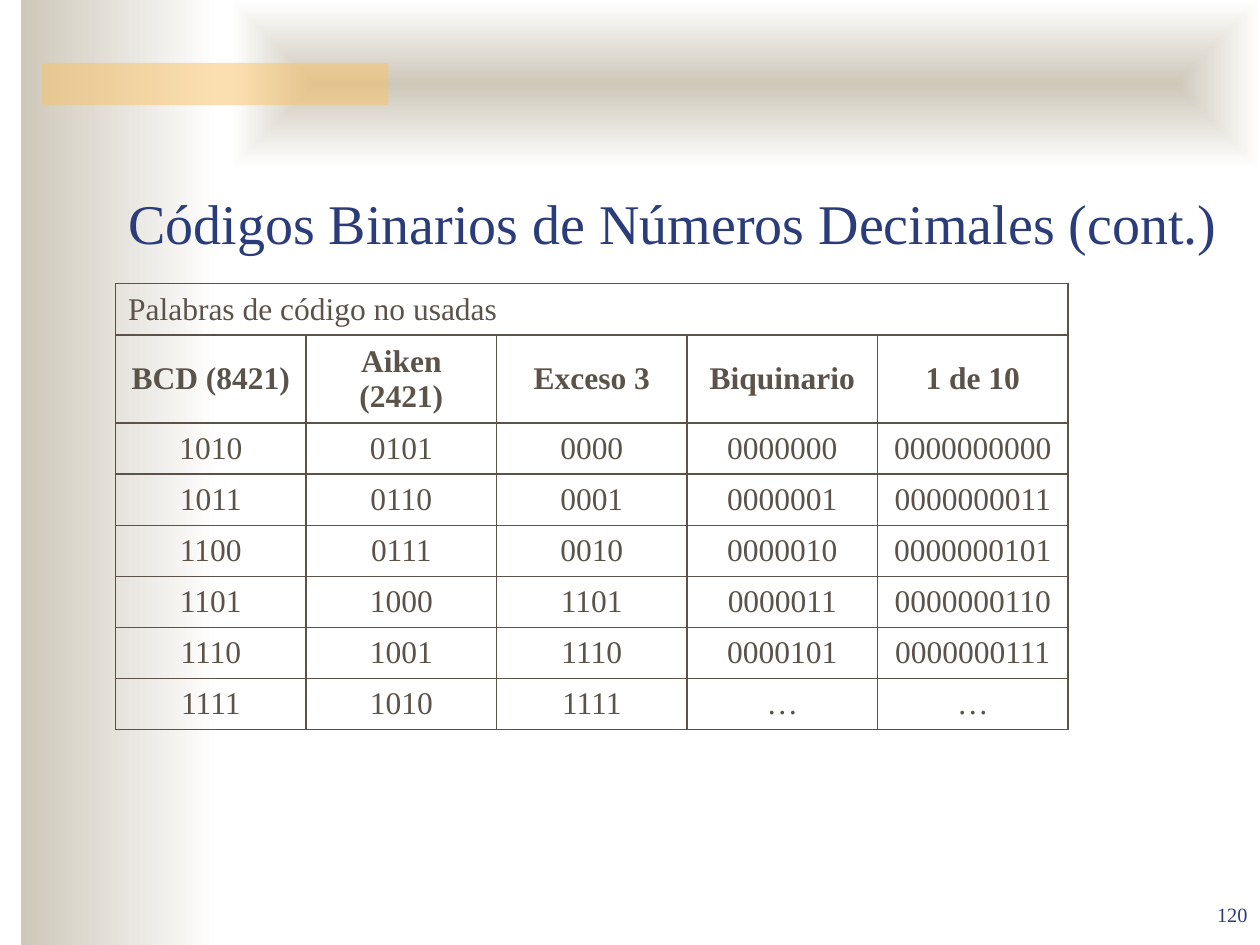
from lxml import etree
from pptx import Presentation
from pptx.dml.color import RGBColor
from pptx.enum import shapes, text
from pptx.oxml import parse_xml
from pptx.oxml.ns import nsdecls, qn
from pptx.util import Cm, Pt

COLORS = {"sand": "CEC8BA", "white": "FFFFFF", "amber": "FAC164",
          "navy": "2A3D7A", "brown": "5B5249"}
FONT = "Times New Roman"
LINEAR = '<a:lin ang="0" scaled="1"/>'
FROM_CENTER = ('<a:path path="shape">'
               '<a:fillToRect l="50000" t="50000" r="50000" b="50000"/></a:path>')
CODES = [
    ["BCD (8421)", "Aiken (2421)", "Exceso 3", "Biquinario", "1 de 10"],
    ["1010", "0101", "0000", "0000000", "0000000000"],
    ["1011", "0110", "0001", "0000001", "0000000011"],
    ["1100", "0111", "0010", "0000010", "0000000101"],
    ["1101", "1000", "1101", "0000011", "0000000110"],
    ["1110", "1001", "1110", "0000101", "0000000111"],
    ["1111", "1010", "1111", "…", "…"],
]


def style(paragraph, size, color, alignment, bold=False):
    paragraph.alignment = alignment
    for run in paragraph.runs:
        run.font.name = FONT
        run.font.size = Pt(size)
        run.font.bold = bold
        run.font.color.rgb = RGBColor.from_string(COLORS[color])


def add_band(left, top, width, height, color):
    band = slide.shapes.add_shape(shapes.MSO_SHAPE.RECTANGLE,
                                  Cm(left), Cm(top), Cm(width), Cm(height))
    band.shadow.inherit = False
    band.line.fill.background()
    band.fill.solid()
    band.fill.fore_color.rgb = RGBColor.from_string(COLORS[color])
    return band


presentation = Presentation()
presentation.slide_width = Cm(25.4)
presentation.slide_height = Cm(19.05)
slide = presentation.slides.add_slide(presentation.slide_layouts[5])

# Background bands
for box, direction in [((0.42, 0, 4.02, 19.05), LINEAR),
                       ((4.66, 0, 20.74, 3.39), FROM_CENTER)]:
    band = add_band(*box, "sand")
    solid = band.element.spPr.find(qn("a:solidFill"))
    gradient = parse_xml(
        f'<a:gradFill {nsdecls("a")} rotWithShape="1"><a:gsLst>'
        f'<a:gs pos="0"><a:srgbClr val="{COLORS["sand"]}"/></a:gs>'
        f'<a:gs pos="100000"><a:srgbClr val="{COLORS["white"]}"/></a:gs>'
        f'</a:gsLst>{direction}</a:gradFill>')
    band.element.spPr.replace(solid, gradient)

accent = add_band(0.85, 1.27, 6.98, 0.85, "amber")
accent_color = accent.element.spPr.find(qn("a:solidFill"))[0]
etree.SubElement(accent_color, qn("a:alpha"), val="50000")

# Title, in front of the bands
title = slide.shapes.title
title.element.getparent().append(title.element)
title.left, title.top, title.width, title.height = Cm(2.33), Cm(1.48), Cm(23.07), Cm(3.81)
title.text_frame.text = "Códigos Binarios de Números Decimales (cont.)"
title.text_frame.auto_size = text.MSO_AUTO_SIZE.NONE
title.text_frame.vertical_anchor = text.MSO_ANCHOR.BOTTOM
style(title.text_frame.paragraphs[0], 32, "navy", text.PP_ALIGN.LEFT)

# Unused code words
rows = [["Palabras de código no usadas", "", "", "", ""]] + CODES
table = slide.shapes.add_table(len(rows), 5, Cm(2.33), Cm(5.72), Cm(19.2), Cm(9)).table
table.first_row = table.horz_banding = False
for column in table.columns:
    column.width = Cm(3.84)
for row in table.rows:
    row.height = Cm(1.03)
table.rows[1].height = Cm(1.78)
table.cell(0, 0).merge(table.cell(0, 4))

for row_index, values in enumerate(rows):
    alignment = text.PP_ALIGN.CENTER if row_index else text.PP_ALIGN.LEFT
    for column_index, value in enumerate(values):
        cell = table.cell(row_index, column_index)
        cell.text_frame.text = value
        cell.vertical_anchor = text.MSO_ANCHOR.MIDDLE
        style(cell.text_frame.paragraphs[0], 18, "brown", alignment, row_index == 1)
        properties = cell._tc.get_or_add_tcPr()
        for side in ("lnL", "lnR", "lnT", "lnB"):
            properties.append(parse_xml(
                f'<a:{side} {nsdecls("a")} w="{Pt(1)}"><a:solidFill>'
                f'<a:srgbClr val="{COLORS["brown"]}"/></a:solidFill></a:{side}>'))
        cell.fill.background()

# Raised page number
number = slide.shapes.add_textbox(Cm(22.86), Cm(17.8), Cm(2.54), Cm(1.27))
number.text_frame.word_wrap = True
number.text_frame.vertical_anchor = text.MSO_ANCHOR.BOTTOM
number.text_frame.text = "120"
number_paragraph = number.text_frame.paragraphs[0]
style(number_paragraph, 20, "navy", text.PP_ALIGN.RIGHT)
number_paragraph.runs[0].font._element.set("baseline", "30000")

presentation.save("out.pptx")
